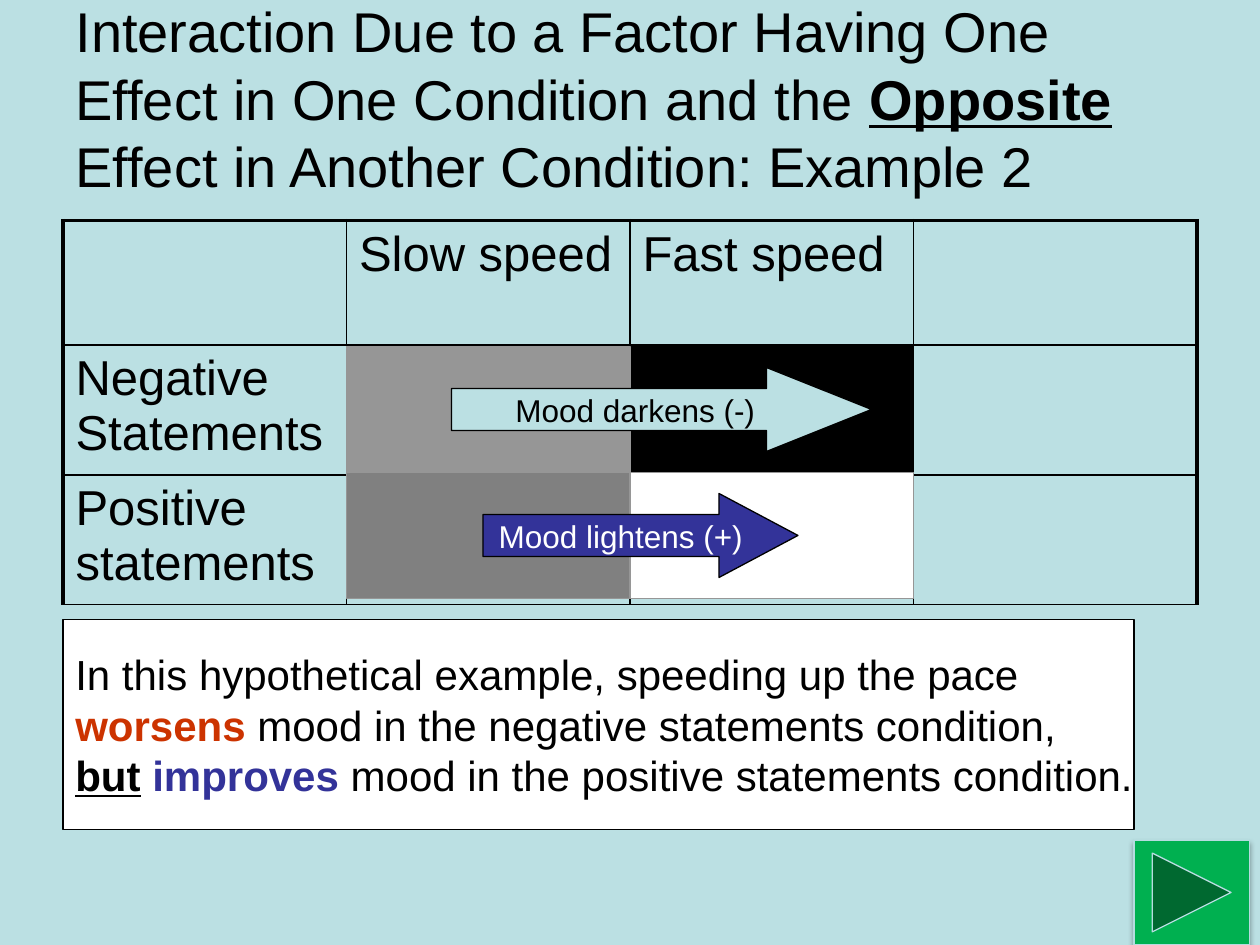
import pptx
import pptx.dml.color
import pptx.enum.shapes
import pptx.enum.text
import pptx.oxml
import pptx.oxml.ns
import pptx.util

SHAPE = pptx.enum.shapes.MSO_SHAPE
ALIGN = pptx.enum.text.PP_ALIGN
ANCHOR = pptx.enum.text.MSO_ANCHOR
NAMESPACE = pptx.oxml.ns.nsdecls("a")

BLACK, WHITE = "000000", "FFFFFF"
SKY, NAVY, RED, GREEN = "BBE0E3", "333399", "CC3300", "00B050"
GREY, DARK_GREY, PALE = "969696", "808080", "B6DCDF"


def color(hex_string):
    return pptx.dml.color.RGBColor.from_string(hex_string)


class Page:
    """Style and current slide; lengths are steps of a 120 by 90 grid."""

    font = "Arial"
    columns, rows = 120, 90

    def __init__(self, deck):
        self.step_x = deck.slide_width / self.columns
        self.step_y = deck.slide_height / self.rows
        self.slide = deck.slides.add_slide(deck.slide_layouts[5])
        background = self.slide.background.fill
        background.solid()
        background.fore_color.rgb = color(SKY)

    def box(self, left, top, width, height):
        return (round(left * self.step_x), round(top * self.step_y),
                round(width * self.step_x), round(height * self.step_y))

    def add_lines(self, frame, lines, size, align=ALIGN.LEFT):
        """Each line is a list of (text, font settings) runs."""
        for index, line in enumerate(lines):
            paragraph = frame.add_paragraph() if index else frame.paragraphs[0]
            paragraph.alignment = align
            for text, look in line:
                run = paragraph.add_run()
                run.text = text
                run.font.name = self.font
                run.font.size = pptx.util.Pt(size)
                run.font.bold = look.get("bold", False)
                run.font.underline = look.get("underline", False)
                run.font.color.rgb = color(look.get("ink", BLACK))

    def title(self, place, runs, size):
        heading = self.slide.shapes.title
        heading.left, heading.top, heading.width, heading.height = self.box(*place)
        heading.text_frame.word_wrap = True
        heading.text_frame.auto_size = pptx.enum.text.MSO_AUTO_SIZE.NONE
        heading.text_frame.vertical_anchor = ANCHOR.MIDDLE
        self.add_lines(heading.text_frame, [runs], size)

    def shape(self, kind, place, fill, line=BLACK, lines=(), size=18, align=ALIGN.CENTER):
        shape = self.slide.shapes.add_shape(kind, *self.box(*place))
        shape.shadow.inherit = False
        shape.fill.solid()
        shape.fill.fore_color.rgb = color(fill)
        shape.line.color.rgb = color(line)
        shape.line.width = pptx.util.Pt(0.75)
        if lines:
            shape.text_frame.word_wrap = False
            shape.text_frame.vertical_anchor = ANCHOR.MIDDLE
            self.add_lines(shape.text_frame, lines, size, align)
        return shape

    def arrow(self, place, head, fill, label, ink):
        arrow = self.shape(SHAPE.RIGHT_ARROW, place, fill,
                           lines=[[(label, {"ink": ink})]])
        arrow.adjustments[0], arrow.adjustments[1] = 0.5, head

    def next_button(self, place):
        button = self.shape(SHAPE.ACTION_BUTTON_FORWARD_OR_NEXT, place, GREEN, PALE)
        effects = button._element.spPr.find(pptx.oxml.ns.qn("a:effectLst"))
        effects.append(pptx.oxml.parse_xml(
            f'<a:outerShdw {NAMESPACE} blurRad="{pptx.util.Pt(3.1)}" '
            f'dist="{pptx.util.Pt(1.8)}" dir="5400000" rotWithShape="0">'
            f'<a:srgbClr val="{BLACK}"><a:alpha val="35000"/></a:srgbClr></a:outerShdw>'))

    def table(self, place, heights, texts, size):
        last = len(texts[0]) - 1
        table = self.slide.shapes.add_table(
            len(texts), last + 1, *self.box(*place)).table
        table.first_row = table.horz_banding = False
        for r, row in enumerate(texts):
            table.rows[r].height = round(heights[r] * self.step_y)
            for c, text in enumerate(row):
                cell = table.cell(r, c)
                cell.fill.background()
                if text:
                    self.add_lines(cell.text_frame, [[(text, {})]], size)
                self.borders(cell, {"L": c == 0, "R": c == last, "T": r == 0, "B": False})

    def borders(self, cell, thick_sides):
        properties = cell._tc.get_or_add_tcPr()
        for index, (side, thick) in enumerate(thick_sides.items()):
            width = pptx.util.Pt(2.25 if thick else 1)
            properties.insert(index, pptx.oxml.parse_xml(
                f'<a:ln{side} {NAMESPACE} w="{width}"><a:solidFill>'
                f'<a:srgbClr val="{BLACK}"/></a:solidFill></a:ln{side}>'))


def main():
    deck = pptx.Presentation()
    deck.slide_width, deck.slide_height = pptx.util.Inches(10), pptx.util.Inches(7.5)
    page = Page(deck)

    page.title((6, 0, 107, 18.6), [
        ("Interaction Due to a Factor Having One Effect in One Condition and the ", {}),
        ("Opposite", {"bold": True, "underline": True}),
        (" Effect in Another Condition: Example 2", {})], 32)

    page.table((6, 21, 108, 36.6), (11.88, 12.36, 12.36), [
        ["", "Slow speed", "Fast speed", ""],
        ["Negative Statements", "", "", ""],
        ["Positive statements", "", "", ""]], 28)

    page.shape(SHAPE.RECTANGLE, (6, 59, 102, 20), WHITE, size=24, align=ALIGN.LEFT, lines=[
        [("In this hypothetical example, speeding up the pace", {})],
        [("worsens", {"bold": True, "ink": RED}),
         (" mood in the negative statements condition,", {})],
        [("but", {"bold": True, "underline": True}),
         (" ", {}),
         ("improves", {"bold": True, "ink": NAVY}),
         (" mood in the positive statements condition.", {})]])

    mood_shades = [(1, 0, BLACK, BLACK), (0, 0, GREY, GREY),
                   (0, 1, DARK_GREY, GREY), (1, 1, WHITE, GREY)]
    for column, row, fill, line in mood_shades:
        page.shape(SHAPE.RECTANGLE, (33 + 27 * column, 33 + 12 * row, 27, 12), fill, line)

    page.arrow((46, 47, 30, 8), 0.94, NAVY, "Mood lightens (+)", WHITE)
    page.arrow((43, 35, 40, 8), 1.25, SKY, "Mood darkens (-)", BLACK)
    page.next_button((108, 80, 11, 10))

    deck.save("out.pptx")


if __name__ == "__main__":
    main()
